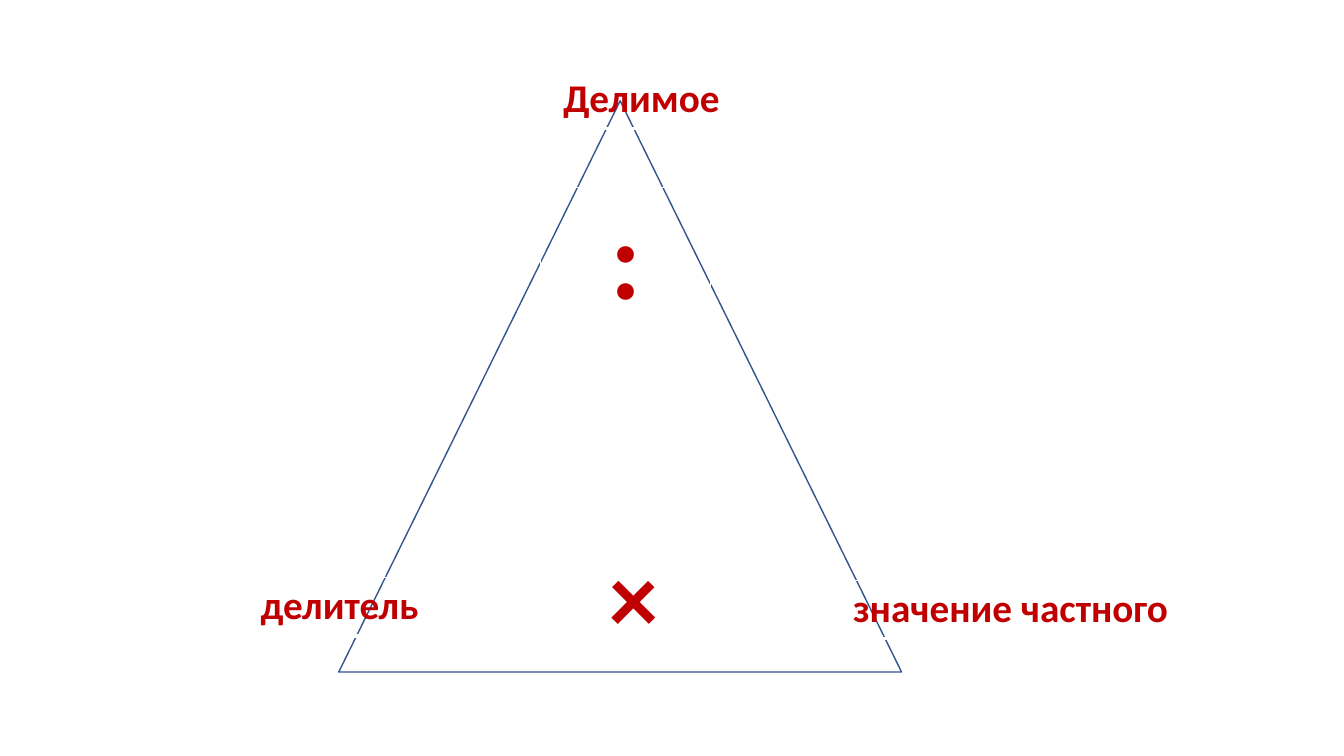
"""Builds the division triangle slide."""
from dataclasses import dataclass

from lxml import etree
from pptx import Presentation
from pptx import util as u
from pptx.dml.color import RGBColor
from pptx.enum import shapes, text
from pptx.oxml import ns


@dataclass(frozen=True)
class Theme:
    font: str = "Calibri"
    ink: str = "C00000"
    outline: str = "325491"
    border: str = "FFFFFF"
    label: int = 28
    divide: int = 80
    times: int = 70


class Deck:
    def __init__(self, theme):
        self.theme = theme
        self.prs = Presentation()
        self.prs.slide_width, self.prs.slide_height = u.Pt(960), u.Pt(540)
        self.s = self.prs.slides.add_slide(self.prs.slide_layouts[6])

    def triangle(self, *box):
        sp = self.s.shapes.add_shape(
            shapes.MSO_SHAPE.ISOSCELES_TRIANGLE, *map(u.Pt, box))
        sp.shadow.inherit = False
        sp.fill.background()
        sp.line.color.rgb = RGBColor.from_string(self.theme.outline)
        sp.line.width = u.Pt(1)

    def borders(self, cell):
        tcPr = cell._tc.get_or_add_tcPr()
        widths = {"a:lnL": 1, "a:lnR": 1, "a:lnT": 1, "a:lnB": 3}
        for i, (tag, width) in enumerate(widths.items()):
            ln = etree.Element(ns.qn(tag), w=str(u.Pt(width)))
            fill = etree.SubElement(ln, ns.qn("a:solidFill"))
            etree.SubElement(fill, ns.qn("a:srgbClr"), val=self.theme.border)
            tcPr.insert(i, ln)

    def caption(self, words, size, *box):
        tbl = self.s.shapes.add_table(1, 1, *map(u.Pt, box)).table
        cell = tbl.cell(0, 0)
        cell.fill.background()
        self.borders(cell)
        p = cell.text_frame.paragraphs[0]
        p.text = words
        p.alignment = text.PP_ALIGN.CENTER
        f = p.runs[0].font
        f.name, f.size, f.bold = self.theme.font, u.Pt(size), True
        f.color.rgb = RGBColor.from_string(self.theme.ink)


def main():
    theme = Theme()
    deck = Deck(theme)
    deck.triangle(242, 72, 402, 408)
    for words, left, top in (("Делимое", 246.2, 50.4),
                             ("значение частного", 509.8, 414.7),
                             ("делитель ", 33.8, 412.6)):
        deck.caption(words, theme.label, left, top, 424, 41)
    deck.caption(":", theme.divide, 386, 134, 121.7, 103)
    deck.caption("×", theme.times, 391.7, 382.3, 121.7, 91.4)
    deck.prs.save("out.pptx")


if __name__ == "__main__":
    main()
